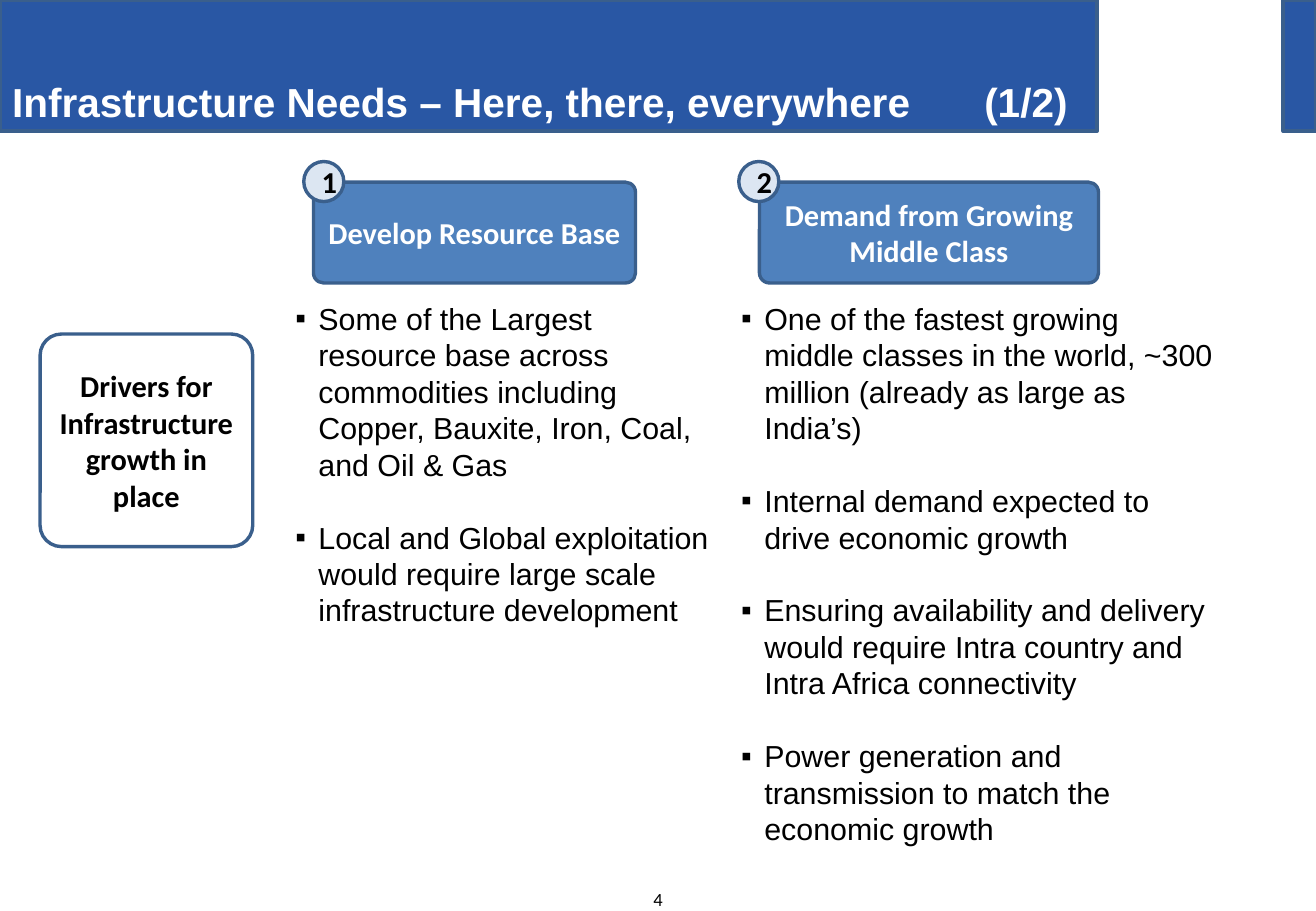
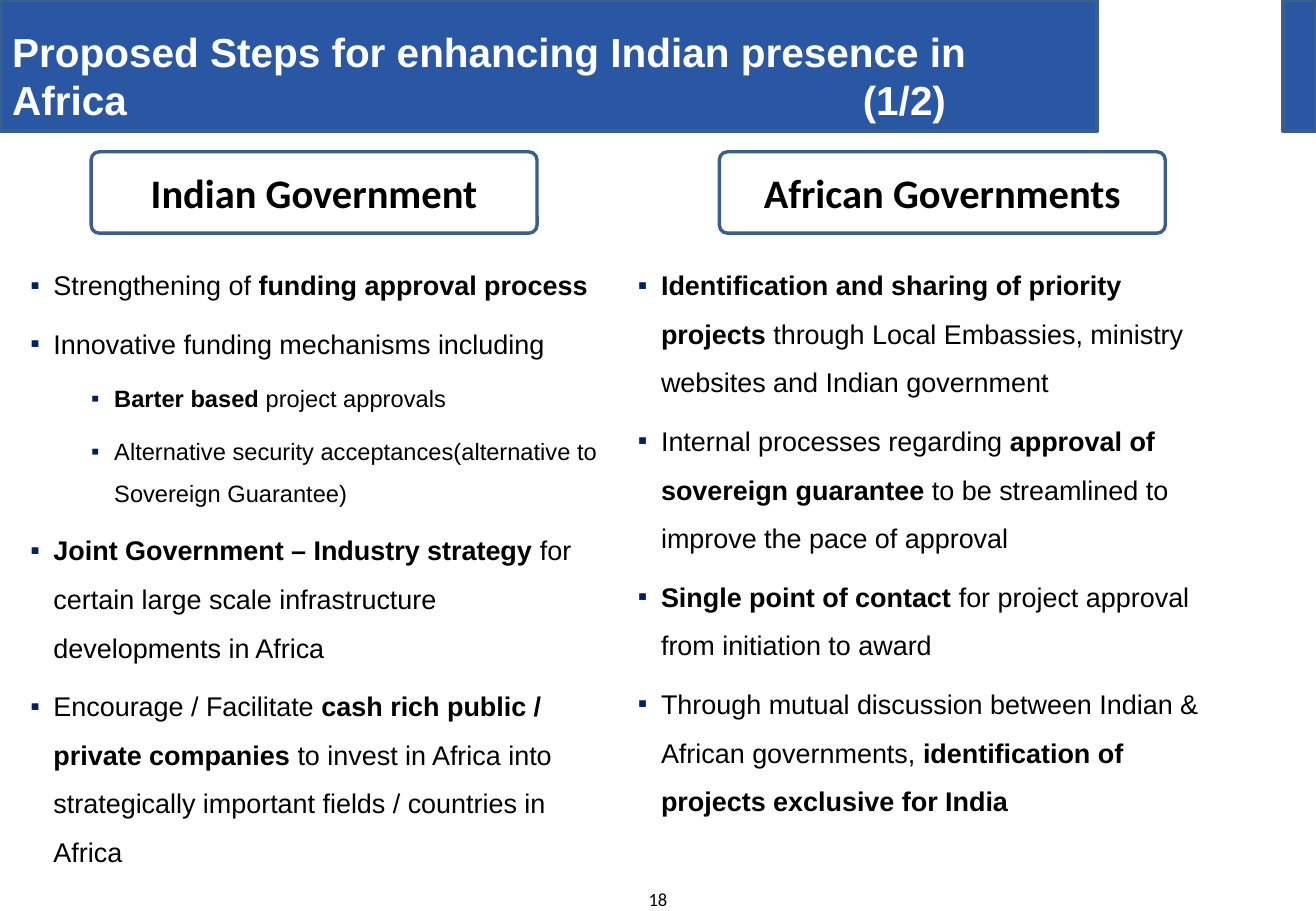
import pptx
import pptx.dml.color
import pptx.enum.shapes
import pptx.enum.text
import pptx.oxml
import pptx.oxml.ns
import pptx.util

Inches = pptx.util.Inches
Pt = pptx.util.Pt
RGBColor = pptx.dml.color.RGBColor
Preset = pptx.enum.shapes.MSO_SHAPE
Align = pptx.enum.text.PP_ALIGN
Anchor = pptx.enum.text.MSO_ANCHOR

BAND_BLUE = RGBColor(0x29, 0x57, 0xA4)
OUTLINE = RGBColor(0x3A, 0x5F, 0x8C)
HEADER_BLUE = RGBColor(0x4F, 0x81, 0xBD)
BADGE_BLUE = RGBColor(0xDC, 0xE6, 0xF2)
NAVY = RGBColor(0x00, 0x20, 0x60)
BLACK = RGBColor(0, 0, 0)
WHITE = RGBColor(0xFF, 0xFF, 0xFF)


def write(frame, *paragraphs, size=18, font="Calibri", color=BLACK, bold=False,
          align=Align.CENTER, anchor=Anchor.MIDDLE, inset=None, bullet=None,
          line=1.0, after=0, tab=None):
    """Fill a text frame; a leading "> " marks a sub-item, ** toggles bold."""
    frame.word_wrap = True
    frame.auto_size = pptx.enum.text.MSO_AUTO_SIZE.NONE
    frame.vertical_anchor = anchor
    across, down = (0.1, 0.05) if inset is None else (inset, inset)
    frame.margin_left = frame.margin_right = Inches(across)
    frame.margin_top = frame.margin_bottom = Inches(down)
    for index, text in enumerate(paragraphs):
        paragraph = frame.paragraphs[0] if index == 0 else frame.add_paragraph()
        level = 1 if text.startswith("> ") else 0
        paragraph.level = level
        properties = paragraph._p.get_or_add_pPr()
        extras = []
        if bullet is not None:
            properties.set("marL", str(Inches(0.19 + 0.5 * level)))
            properties.set("indent", str(Inches(-0.19)))
            extras += [f'<a:buClr {{ns}}><a:srgbClr val="{bullet}"/></a:buClr>',
                       '<a:buFont {ns} typeface="Arial"/>',
                       '<a:buChar {ns} char="▪"/>']
        if tab is not None:
            extras.append(f'<a:tabLst {{ns}}><a:tab pos="{Inches(tab)}" algn="l"/></a:tabLst>')
        for extra in extras:
            properties.append(pptx.oxml.parse_xml(extra.format(ns=pptx.oxml.ns.nsdecls("a"))))
        paragraph.alignment = align
        paragraph.line_spacing = line
        paragraph.space_before = Pt(0)
        paragraph.space_after = Pt(after)
        for part, words in enumerate(text.removeprefix("> ").split("**")):
            if words:
                run = paragraph.add_run()
                run.text = words
                run.font.name = font
                run.font.size = Pt(size - 2 * level)
                run.font.bold = bold or part % 2 == 1
                run.font.color.rgb = color


def add_outlined(slide, preset, left, top, width, height, fill=None):
    shape = slide.shapes.add_shape(preset, Inches(left), Inches(top), Inches(width), Inches(height))
    shape.shadow.inherit = False
    if fill is None:
        shape.fill.background()
    else:
        shape.fill.solid()
        shape.fill.fore_color.rgb = fill
    shape.line.color.rgb = OUTLINE
    shape.line.width = Pt(2)
    if preset == Preset.ROUNDED_RECTANGLE:
        shape.adjustments[0] = 0.1
    return shape


deck = pptx.Presentation()
deck.slide_width = Inches(10.83)
deck.slide_height = Inches(7.5)
two_columns = deck.slide_layouts.get_by_name("Two Content")

# Page number, title, title box (top, width, height), tab stop
pages = [
    ("4", "Infrastructure Needs – Here, there, everywhere\t(1/2)", (0.58, 9, 0.5), 8),
    ("18", "Proposed Steps for enhancing Indian presence in Africa\t(1/2)", (0.17, 8.75, 0.91), 7),
]
slides = []
for number, heading, (top, width, height), tab in pages:
    slide = deck.slides.add_slide(two_columns)
    slides.append(slide)
    title = slide.shapes.title
    title.left, title.top = Inches(0), Inches(top)
    title.width, title.height = Inches(width), Inches(height)
    write(title.text_frame, heading, size=24, font="Arial", color=WHITE, bold=True,
          align=Align.LEFT, anchor=Anchor.TOP, tab=tab)
    page_number = slide.shapes.add_textbox(Inches(5.28), Inches(7.31), Inches(0.27), Inches(0.19))
    write(page_number.text_frame, number, size=11, anchor=Anchor.TOP, inset=0)

drivers, steps = slides

# The header bands belong to the layout, behind every title
for left, width in [(0, 9.03), (10.56, 0.27)]:
    band = add_outlined(drivers, Preset.RECTANGLE, left, 0, width, 1.08, BAND_BLUE)
    two_columns.shapes.element.insert(2, band.element)

# Drivers of infrastructure growth
driver_columns = [
    ("1", "Develop Resource Base", 2.5, (2.58, 2.65), (2.33, 3.67, 2.83), [
        "Some of the Largest resource base across commodities including Copper, Bauxite, "
        "Iron, Coal, and Oil & Gas",
        "Local and Global exploitation would require large scale infrastructure development",
    ]),
    ("2", "Demand from Growing Middle Class", 6.08, (6.25, 2.79), (6, 4.08, 4.64), [
        "One of the fastest growing middle classes in the world, ~300 million "
        "(already as large as India’s)",
        "Internal demand expected to drive economic growth",
        "Ensuring availability and delivery would require Intra country and "
        "Intra Africa connectivity",
        "Power generation and transmission to match the economic growth",
    ]),
]
for column, (number, heading, badge_left, header_box, list_box, points) in enumerate(driver_columns, 1):
    header_left, header_width = header_box
    header = add_outlined(drivers, Preset.ROUNDED_RECTANGLE, header_left, 1.5,
                          header_width, 0.83, HEADER_BLUE)
    write(header.text_frame, heading, color=WHITE, bold=True)
    badge = add_outlined(drivers, Preset.OVAL, badge_left, 1.33, 0.33, 0.33, BADGE_BLUE)
    write(badge.text_frame, number, bold=True)
    body = drivers.placeholders[column]
    left, width, height = list_box
    body.left, body.top = Inches(left), Inches(2.42)
    body.width, body.height = Inches(width), Inches(height)
    write(body.text_frame, *points, font="Arial", align=Align.LEFT, anchor=Anchor.TOP,
          bullet=BLACK, after=21.6)

summary = add_outlined(drivers, Preset.ROUNDED_RECTANGLE, 0.33, 2.75, 1.75, 1.75)
write(summary.text_frame, "Drivers for Infrastructure growth in place", bold=True)

# Proposed steps for each government
government_columns = [
    ("Indian Government", 0.75, 0.25, [
        "Strengthening of **funding approval process**",
        "Innovative funding mechanisms including",
        "> **Barter based **project approvals",
        "> Alternative security acceptances(alternative to Sovereign Guarantee)",
        "**Joint Government – Industry strategy **for certain large scale infrastructure "
        "developments in Africa",
        "Encourage / Facilitate **cash rich public / private companies **to invest in Africa "
        "into strategically important fields / countries in Africa",
    ]),
    ("African Governments", 5.92, 5.25, [
        "**Identification and sharing of priority projects **through Local Embassies, "
        "ministry websites and Indian government",
        "Internal processes regarding **approval of sovereign guarantee** to be streamlined "
        "to improve the pace of approval",
        "**Single point of contact **for project approval from initiation to award",
        "Through mutual discussion between Indian & African governments, "
        "**identification of projects exclusive for India**",
    ]),
]
for column, (heading, header_left, list_left, points) in enumerate(government_columns, 1):
    header = add_outlined(steps, Preset.ROUNDED_RECTANGLE, header_left, 1.25, 3.67, 0.67)
    write(header.text_frame, heading, size=24, bold=True)
    body = steps.placeholders[column]
    body.left, body.top = Inches(list_left), Inches(2.08)
    body.width, body.height = Inches(4.75), Inches(4.58)
    write(body.text_frame, *points, size=16, font="Arial", align=Align.LEFT,
          anchor=Anchor.TOP, inset=0, bullet=NAVY, line=1.5, after=6)

deck.save("out.pptx")
